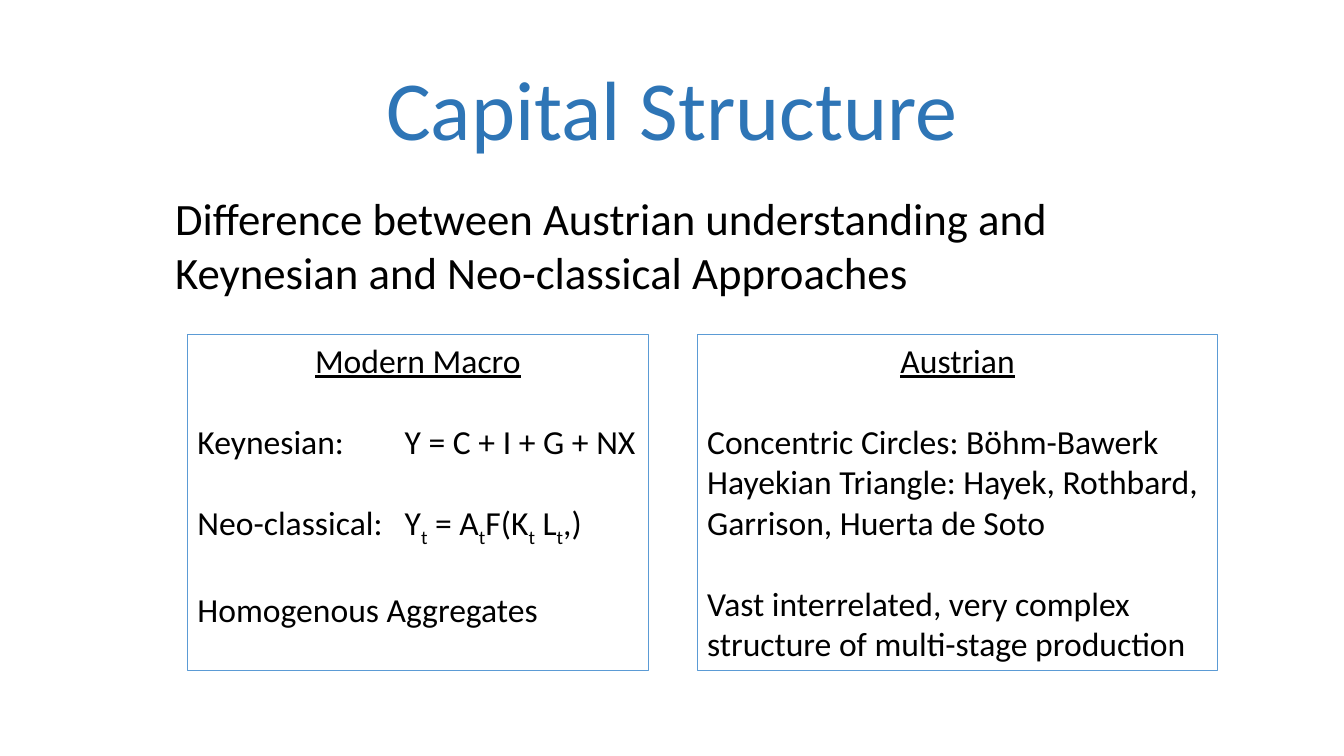
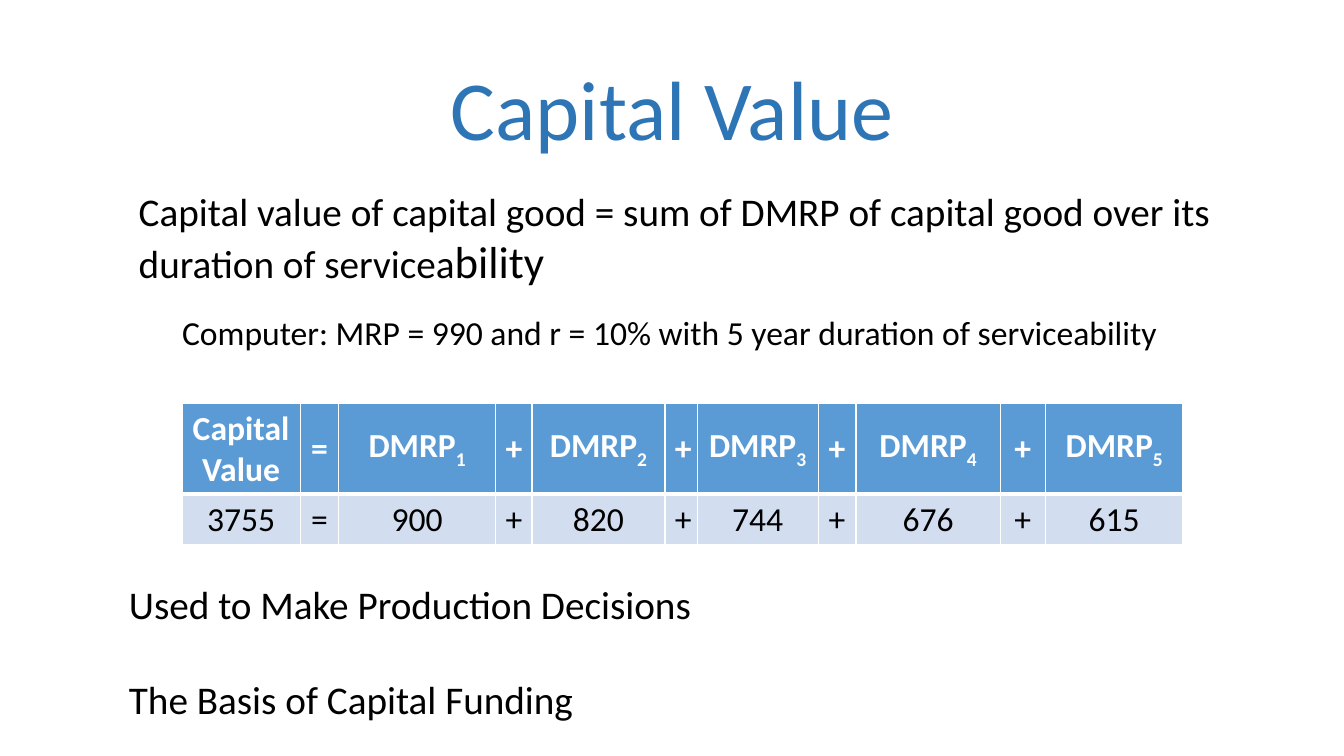
from lxml import etree
from pptx import Presentation
from pptx.dml.color import RGBColor
from pptx.enum import shapes, text as txt
from pptx.oxml import ns
from pptx.util import Pt

TITLE_BLUE = RGBColor(0x2E, 0x75, 0xB6)
ACCENT_BLUE = RGBColor(0x5B, 0x9B, 0xD5)
PALE_BLUE = RGBColor(0xD2, 0xDE, 0xEF)
BLACK = RGBColor(0, 0, 0)
WHITE = RGBColor(0xFF, 0xFF, 0xFF)
FONT = "Calibri"
LEFT, CENTER = txt.PP_ALIGN.LEFT, txt.PP_ALIGN.CENTER
SLIDE_WIDTH, SLIDE_HEIGHT = 960, 540
LINE_HEIGHT = 1.22  # of the font size


def add_run(paragraph, wording, size, color, bold, underline, subscript=False):
    run = paragraph.add_run()
    run.text = wording
    font = run.font
    font.name, font.size, font.bold, font.underline = FONT, Pt(size), bold, underline
    font.color.rgb = color
    if subscript:
        run._r.get_or_add_rPr().set("baseline", "-25000")


def add_text(frame, wording, size=24, color=BLACK, bold=False, underline=False,
             align=LEFT, lines_before=0, line_spacing=None, tab=None, same_line=False):
    """Add a paragraph, or extend the last; the letter after each "_" is a subscript."""
    if same_line or not frame.text:
        paragraph = frame.paragraphs[-1]
    else:
        paragraph = frame.add_paragraph()
    paragraph.alignment = align
    paragraph.space_before = Pt(lines_before * size * LINE_HEIGHT)
    if line_spacing:
        paragraph.line_spacing = line_spacing
    if tab:
        stops = etree.SubElement(paragraph._p.get_or_add_pPr(), ns.qn("a:tabLst"))
        etree.SubElement(stops, ns.qn("a:tab"), pos=str(Pt(tab)), algn="l")
    base, *marked = wording.split("_")
    add_run(paragraph, base, size, color, bold, underline)
    for part in marked:
        add_run(paragraph, part[0], size, color, bold, underline, subscript=True)
        if part[1:]:
            add_run(paragraph, part[1:], size, color, bold, underline)


def add_frame(slide, box):
    frame = slide.shapes.add_textbox(*map(Pt, box)).text_frame
    frame.word_wrap = True
    return frame


def add_titled_slide(deck, title):
    slide = deck.slides.add_slide(deck.slide_layouts[6])
    frame = add_frame(slide, (0, 29, SLIDE_WIDTH, 104))
    frame.vertical_anchor = txt.MSO_ANCHOR.MIDDLE
    add_text(frame, title, size=60, color=TITLE_BLUE, align=CENTER, line_spacing=0.9)
    return slide


def add_school_box(slide, box, heading, points):
    """Outlined box with a heading and points, each with its own format."""
    panel = slide.shapes.add_shape(shapes.MSO_SHAPE.RECTANGLE, *map(Pt, box))
    panel.shadow.inherit = False
    panel.fill.background()
    panel.line.color.rgb = ACCENT_BLUE
    panel.line.width = Pt(0.75)
    frame = panel.text_frame
    frame.word_wrap = True
    frame.vertical_anchor = txt.MSO_ANCHOR.TOP
    add_text(frame, heading, underline=True, align=CENTER)
    for wording, style in points:
        add_text(frame, wording, **style)


def set_borders(cell, **widths):
    """White borders; sides are named L, R, T and B, in that order."""
    properties = cell._tc.get_or_add_tcPr()
    for position, (side, width) in enumerate(widths.items()):
        line = etree.Element(ns.qn("a:ln" + side), w=str(Pt(width)))
        fill = etree.SubElement(line, ns.qn("a:solidFill"))
        etree.SubElement(fill, ns.qn("a:srgbClr"), val=str(WHITE))
        properties.insert(position, line)


def add_value_table(slide, left, top, widths, heights, rows):
    table = slide.shapes.add_table(len(rows), len(widths), Pt(left), Pt(top),
                                   Pt(sum(widths)), Pt(sum(heights))).table
    table.horz_banding = False
    for column, width in zip(table.columns, widths):
        column.width = Pt(width)
    for index, (row, height, wordings) in enumerate(zip(table.rows, heights, rows)):
        row.height = Pt(height)
        header = index == 0
        for cell, wording in zip(row.cells, wordings):
            cell.fill.solid()
            cell.fill.fore_color.rgb = ACCENT_BLUE if header else PALE_BLUE
            cell.vertical_anchor = txt.MSO_ANCHOR.MIDDLE
            add_text(cell.text_frame, wording, color=WHITE if header else BLACK,
                     bold=header, align=CENTER)
            set_borders(cell, L=1, R=1, T=1 if header else 3, B=3 if header else 1)


def sum_row(total, terms):
    """Cells of an equation: total = term + term + ..."""
    cells = [total, "="]
    for term in terms:
        cells += [term, "+"]
    return cells[:-1]


def build_structure_slide(deck):
    slide = add_titled_slide(deck, "Capital Structure")
    add_text(add_frame(slide, (118, 133, 724, 85)),
             "Difference between Austrian understanding and "
             "Keynesian and Neo-classical Approaches", size=32)
    spaced = {"lines_before": 1}
    equation = {"lines_before": 1, "tab": 148}
    add_school_box(slide, (134, 239, 329, 240), "Modern Macro", [
        ("Keynesian:\tY = C + I + G + NX", equation),
        ("Neo-classical:\tY_t = A_tF(K_t L_t,)", equation),
        ("Homogenous Aggregates", spaced),
    ])
    add_school_box(slide, (498, 239, 372, 240), "Austrian", [
        ("Concentric Circles: Böhm-Bawerk", spaced),
        ("Hayekian Triangle: Hayek, Rothbard, Garrison, Huerta de Soto", {}),
        ("Vast interrelated, very complex structure of multi-stage production", spaced),
    ])


def build_value_slide(deck):
    slide = add_titled_slide(deck, "Capital Value")
    definition = add_frame(slide, (92, 130, 791, 80))
    add_text(definition, "Capital value of capital good = sum of DMRP of capital good "
                         "over its duration of servicea", size=28)
    add_text(definition, "bility", size=32, same_line=True)
    add_value_table(
        slide, 130, 288,
        widths=[84.5, 27.5, 112, 26, 95, 23, 86.5, 27, 103, 32.5, 98],
        heights=[65, 36],
        rows=[sum_row("Capital Value", [f"DMRP_{year}" for year in range(1, 6)]),
              sum_row("3755", ["900", "820", "744", "676", "615"])])
    add_text(add_frame(slide, (123, 219, 714, 36)),
             "Computer: MRP = 990 and r = 10% with 5 year duration of serviceability")
    uses = add_frame(slide, (85, 411, 791, 109))
    add_text(uses, "Used to Make Production Decisions", size=28)
    add_text(uses, "The Basis of Capital Funding", size=28, lines_before=1)


def main():
    deck = Presentation()
    deck.slide_width, deck.slide_height = Pt(SLIDE_WIDTH), Pt(SLIDE_HEIGHT)
    build_structure_slide(deck)
    build_value_slide(deck)
    deck.save("out.pptx")


if __name__ == "__main__":
    main()
